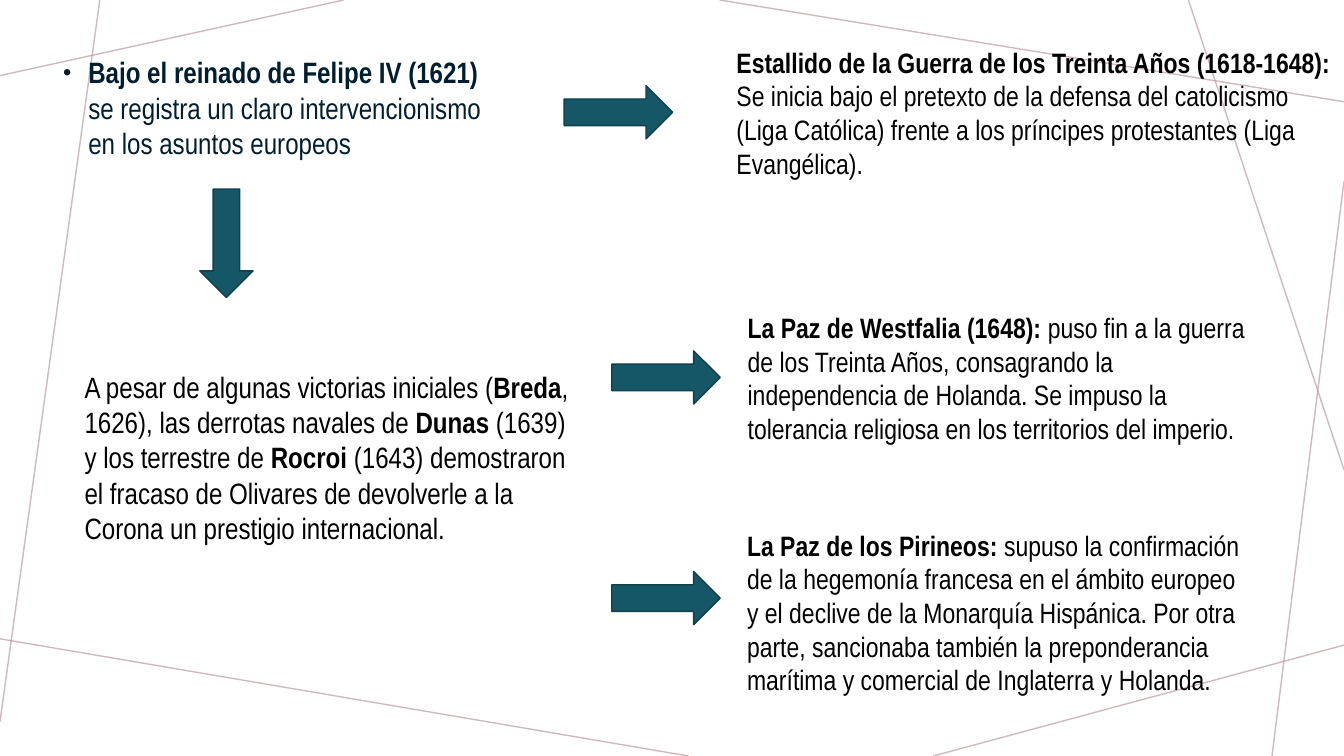
from dataclasses import dataclass

from lxml import etree
from pptx import Presentation
from pptx.dml.color import RGBColor
from pptx.enum.shapes import MSO_CONNECTOR, MSO_SHAPE
from pptx.oxml.ns import qn
from pptx.util import Pt

ARROW = MSO_SHAPE.RIGHT_ARROW
LINE = MSO_CONNECTOR.STRAIGHT


@dataclass(frozen=True)
class Theme:
    """Colours, type and shared measures of the slide."""

    font: str = "Arial Narrow"
    large: int = 21
    small: int = 20
    ink: str = "000000"
    navy: str = "001E2E"
    teal: str = "155767"
    edge: str = "10404C"
    mauve: str = "BA9CA0"
    alpha: int = 70


THEME = Theme()
WIDE, HIGH = 960, 540
RAYS = [
    (245.5, 0, 0, 54),
    (71.3, 0, 0, 515.5),
    (491.8, HIGH, 0, 456.3),
    (WIDE, 460.8, 666.7, HIGH),
    (WIDE, 129.6, 908.6, HIGH),
    (WIDE, 335.5, 848.9, 0),
    (WIDE, 72.7, 514, 0),
]
REIGN = ["*Bajo el reinado de Felipe IV (1621)* se registra un claro "
         "intervencionismo en los asuntos europeos"]
WAR = ["*Estallido de la Guerra de los Treinta Años (1618-1648):*",
       "Se inicia bajo el pretexto de la defensa del catolicismo (Liga Católica) "
       "frente a los príncipes protestantes (Liga Evangélica)."]
LOSSES = ["A pesar de algunas victorias iniciales (*Breda*, 1626), las derrotas "
          "navales de *Dunas *(1639) y los terrestre de *Rocroi *(1643) "
          "demostraron el fracaso de Olivares de devolverle a la Corona un "
          "prestigio internacional."]
PEACE = ["*La Paz de Westfalia (1648):* puso fin a la guerra de los Treinta Años, "
         "consagrando la independencia de Holanda. Se impuso la tolerancia "
         "religiosa en los territorios del imperio."]
TREATY = ["*La Paz de los Pirineos:* supuso la confirmación de la hegemonía "
          "francesa en el ámbito europeo y el declive de la Monarquía Hispánica. "
          "Por otra parte, sancionaba también la preponderancia marítima y "
          "comercial de Inglaterra y Holanda."]


def tint(color):
    """Turn a hex string into a colour."""
    return RGBColor.from_string(color)


def draw_rays(slide):
    """Draw the thin translucent lines behind the text."""
    for ends in RAYS:
        ray = slide.shapes.add_connector(LINE, *map(Pt, ends))
        ray.line.width = Pt(1)
        ray.line.color.rgb = tint(THEME.mauve)
        shade = next(ray.line._ln.iter(qn("a:srgbClr")))
        etree.SubElement(shade, qn("a:alpha"), val=str(THEME.alpha * 1000))
        etree.SubElement(ray._element.spPr, qn("a:effectLst"))


def add_bullet(para):
    """Give a paragraph a small hanging bullet."""
    props = para._p.get_or_add_pPr()
    props.set("marL", str(Pt(18)))
    props.set("indent", str(-Pt(18)))
    etree.SubElement(props, qn("a:buSzPct"), val="80000")
    etree.SubElement(props, qn("a:buFont"), typeface="Arial")
    etree.SubElement(props, qn("a:buChar"), char="•")


def add_note(slide, box, texts, size, color=THEME.ink, bullet=False):
    """Write paragraphs in a box, with starred parts in bold."""
    frame = slide.shapes.add_textbox(*map(Pt, box)).text_frame
    frame.word_wrap = True
    for i, text in enumerate(texts):
        para = frame.add_paragraph() if i else frame.paragraphs[0]
        if bullet:
            add_bullet(para)
        para.font.name = THEME.font
        para.font.size = Pt(size)
        para.font.color.rgb = tint(color)
        for j, part in enumerate(text.split("*")):
            if part:
                run = para.add_run()
                run.text = part
                run.font.bold = j % 2 == 1


def add_arrow(slide, left, top, turn=0):
    """Place a block arrow, turned clockwise by some degrees."""
    arrow = slide.shapes.add_shape(ARROW, Pt(left), Pt(top), Pt(77.5), Pt(38))
    arrow.rotation = turn
    arrow.shadow.inherit = False
    arrow.fill.solid()
    arrow.fill.fore_color.rgb = tint(THEME.teal)
    arrow.line.color.rgb = tint(THEME.edge)
    arrow.line.width = Pt(1)


def draw_causes(slide, left, top):
    """Lay out the left column: the reign and its defeats."""
    add_note(slide, (left, top, 332.5, 90), REIGN, THEME.large, THEME.navy, True)
    add_arrow(slide, left + 85, top + 119.5, 90)
    add_note(slide, (left + 15.3, top + 224.6, 360.7, 134.6), LOSSES, THEME.large)


def draw_events(slide, left, top):
    """Lay out the right column: the war and the two treaties."""
    add_note(slide, (left + 116, top, 440.5, 104.4), WAR, THEME.small)
    add_arrow(slide, left, top + 32.4)
    add_note(slide, (left + 124, top + 189.4, 377.3, 104.4), PEACE, THEME.small)
    add_note(slide, (left + 123.5, top + 345, 368.6, 128.2), TREATY, THEME.small)
    for drop in (221.8, 379.4):
        add_arrow(slide, left + 34, top + drop)


def main():
    """Build and save the slide."""
    deck = Presentation()
    deck.slide_width, deck.slide_height = Pt(WIDE), Pt(HIGH)
    slide = deck.slides.add_slide(deck.slide_layouts[6])
    draw_rays(slide)
    draw_causes(slide, 38, 35.3)
    draw_events(slide, 403, 28.8)
    deck.save("out.pptx")


if __name__ == "__main__":
    main()
